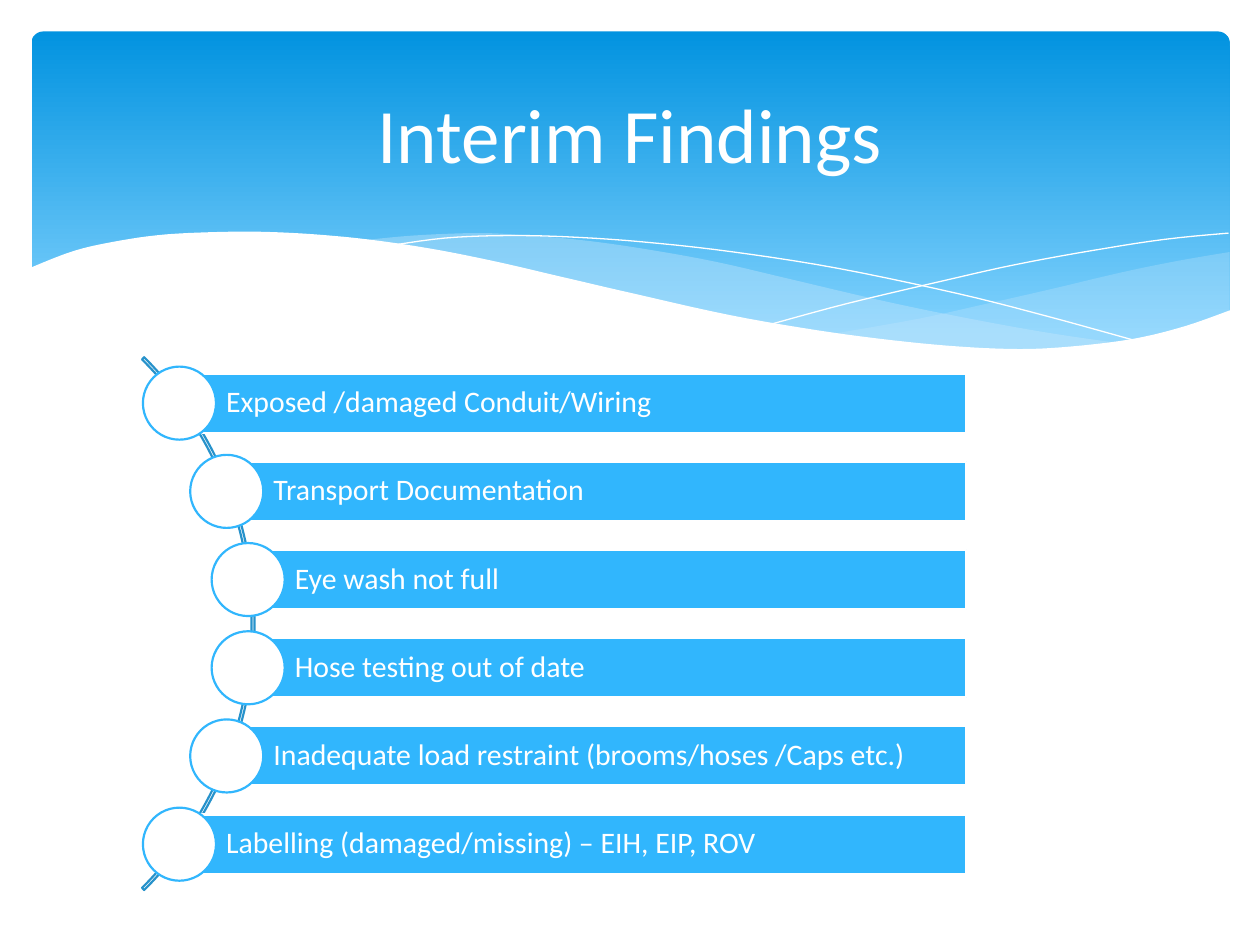
import math

import pptx
import pptx.dml.color
import pptx.enum.shapes
import pptx.enum.text
import pptx.oxml.ns
import pptx.util
from lxml import etree

SHAPE = pptx.enum.shapes.MSO_SHAPE
ALIGN = pptx.enum.text.PP_ALIGN

THEME = {
    "font": "Calibri", "title_size": 44, "item_size": 17, "outline": 1.25,
    "white": "FFFFFF", "accent": "31B6FD", "arc": "2792CB", "mist": "C6E7FC",
    "sky": ("0293E0", "83D3FE"),
}
COLS, ROWS = 10, 7.5

ITEMS = [
    "Exposed /damaged Conduit/Wiring",
    "Transport Documentation",
    "Eye wash not full",
    "Hose testing out of date",
    "Inadequate load restraint (brooms/hoses /Caps etc.)",
    "Labelling (damaged/missing) – EIH, EIP, ROV",
]

RIGHT_WAVE = [
    [(9.76, 2), (9.35, 2.07), (8.91, 2.16), (8.32, 2.3), (7.79, 2.42), (7.29, 2.53), (6.61, 2.65)],
    [(6.61, 2.65), (7.05, 2.71), (7.57, 2.76), (8.03, 2.78), (8.54, 2.76), (8.97, 2.7),
     (9.35, 2.62), (9.76, 2.47)],
]
MIDDLE_WAVE = [
    [(8.93, 2.73), (8.37, 2.65), (7.75, 2.54), (7.06, 2.4), (6.29, 2.22), (5.69, 2.08),
     (5.14, 1.98), (4.65, 1.91), (4.2, 1.87), (3.8, 1.85), (3.28, 1.87), (2.86, 1.91)],
    [(2.86, 1.91), (3.42, 1.99), (4.04, 2.11), (4.49, 2.22), (5.3, 2.4), (6.01, 2.55),
     (6.65, 2.66), (7.22, 2.74), (7.73, 2.77), (8.18, 2.78), (8.57, 2.77), (8.93, 2.73)],
]
FALLING_LINE = [[
    (3.09, 1.95), (3.53, 1.89), (4.01, 1.87), (4.5, 1.88), (5.1, 1.92), (5.82, 2),
    (6.65, 2.13), (7.6, 2.33), (8.31, 2.51), (9.07, 2.72),
]]
RISING_LINE = [[
    (6.13, 2.57), (6.72, 2.41), (7.48, 2.23), (8.06, 2.1), (8.66, 1.99), (9.24, 1.9), (9.75, 1.85),
]]
WHITE_WAVE = [
    [(9.77, 2.46), (9.4, 2.59), (8.99, 2.69), (8.5, 2.75), (8.09, 2.77), (7.61, 2.75),
     (7.08, 2.7), (6.48, 2.62), (5.79, 2.5), (5.03, 2.33), (4.47, 2.2), (3.91, 2.07),
     (3.4, 1.97), (2.92, 1.9), (2.5, 1.86), (2.11, 1.84), (1.77, 1.84), (1.32, 1.86),
     (0.95, 1.91), (0.59, 1.99), (0.23, 2.13)],
    [(0.23, 3.29), (9.77, 3.29)],
]


def smooth(points, steps=5):
    """Return points along a Catmull-Rom curve through the given points."""
    padded = [points[0], *points, points[-1]]
    curve = [points[0]]
    for a, b, c, d in zip(padded, padded[1:], padded[2:], padded[3:]):
        for t in (i / steps for i in range(1, steps + 1)):
            curve.append(tuple(
                0.5 * (2 * q + (r - p) * t + (2 * p - 5 * q + 4 * r - s) * t ** 2
                       + (3 * q - p - 3 * r + s) * t ** 3)
                for p, q, r, s in zip(a, b, c, d)))
    return curve


class Deck:
    """Draws themed elements on the current slide, on a grid of columns and rows."""

    def __init__(self, theme):
        self.theme = theme
        self.prs = pptx.Presentation()
        self.prs.slide_width = pptx.util.Inches(10)
        self.prs.slide_height = pptx.util.Inches(7.5)
        self.s = None

    def add_slide(self):
        self.s = self.prs.slides.add_slide(self.prs.slide_layouts[6])

    def x(self, cols):
        return round(self.prs.slide_width * cols / COLS)

    def y(self, rows):
        return round(self.prs.slide_height * rows / ROWS)

    def box(self, left, top, width, height):
        return self.x(left), self.y(top), self.x(width), self.y(height)

    def color(self, name):
        return pptx.dml.color.RGBColor.from_string(self.theme[name])

    def paint(self, sp, fill=None, line=None, width=0, alpha=None):
        sp.shadow.inherit = False
        if fill:
            sp.fill.solid()
            sp.fill.fore_color.rgb = self.color(fill)
        else:
            sp.fill.background()
        if line:
            sp.line.color.rgb = self.color(line)
            sp.line.width = pptx.util.Pt(width)
        else:
            sp.line.fill.background()
        if alpha:
            qn = pptx.oxml.ns.qn
            rgb = sp._element.spPr.find(qn("a:solidFill")).find(qn("a:srgbClr"))
            etree.SubElement(rgb, qn("a:alpha")).set("val", str(alpha * 1000))

    def shape(self, kind, box, fill=None, line=None, adjust=()):
        sp = self.s.shapes.add_shape(kind, *self.box(*box))
        for i, value in enumerate(adjust):
            sp.adjustments[i] = value
        self.paint(sp, fill, line, self.theme["outline"])
        return sp

    def banner(self, box):
        sp = self.shape(SHAPE.ROUNDED_RECTANGLE, box, adjust=[0.034])
        sp.fill.gradient()
        sp.fill.gradient_angle = 270
        for stop, position, rgb in zip(sp.fill.gradient_stops, (0, 0.9), self.theme["sky"]):
            stop.position = position
            stop.color.rgb = pptx.dml.color.RGBColor.from_string(rgb)

    def wave(self, edges, fill=None, line=None, alpha=None):
        points = [(self.x(cx), self.y(cy)) for edge in edges for cx, cy in smooth(edge)]
        builder = self.s.shapes.build_freeform(*points[0])
        builder.add_line_segments(points[1:], close=fill is not None)
        self.paint(builder.convert_to_shape(), fill, line, alpha=alpha)

    def label(self, sp, text, size, align, inset=0.1):
        tf = sp.text_frame
        tf.word_wrap = True
        tf.vertical_anchor = pptx.enum.text.MSO_ANCHOR.MIDDLE
        tf.margin_left = self.x(inset)
        tf.margin_right = self.x(min(inset, 0.1))
        tf.margin_top = tf.margin_bottom = self.y(0.05)
        p = tf.paragraphs[0]
        p.text = text
        p.alignment = align
        p.font.name = self.theme["font"]
        p.font.size = pptx.util.Pt(self.theme[size])
        p.font.color.rgb = self.color("white")
        return p

    def title(self, text, box):
        sp = self.s.shapes.add_textbox(*self.box(*box))
        self.label(sp, text, "title_size", ALIGN.CENTER)

    def curved_list(self, items, right=7.67, middle=4.95, pitch=0.7):
        radius, bar, dot = 2.99, 0.47, 0.58
        self.shape(SHAPE.BLOCK_ARC, (-3.96, middle - radius, 2 * radius, 2 * radius),
                   line="arc", adjust=[189, 27, 0.004])
        for i, item in enumerate(items):
            rise = (i - (len(items) - 1) / 2) * pitch
            cx, cy = math.sqrt(radius ** 2 - rise ** 2) - 1, middle + rise
            sp = self.shape(SHAPE.RECTANGLE, (cx, cy - bar / 2, right - cx, bar),
                            "accent", "white")
            p = self.label(sp, item, "item_size", ALIGN.LEFT, inset=0.37)
            p.line_spacing = 0.9
            self.shape(SHAPE.OVAL, (cx - dot / 2, cy - dot / 2, dot, dot), "white", "accent")


def main():
    deck = Deck(THEME)
    deck.add_slide()
    deck.banner((0.25, 0.25, 9.51, 2.7))
    deck.wave(RIGHT_WAVE, fill="mist", alpha=29)
    deck.wave(MIDDLE_WAVE, fill="mist", alpha=40)
    deck.wave(FALLING_LINE, line="white")
    deck.wave(RISING_LINE, line="white")
    deck.wave(WHITE_WAVE, fill="white")
    deck.title("Interim Findings", (0.5, 0.37, 9, 1.37))
    deck.curved_list(ITEMS)
    deck.prs.save("out.pptx")


if __name__ == "__main__":
    main()
